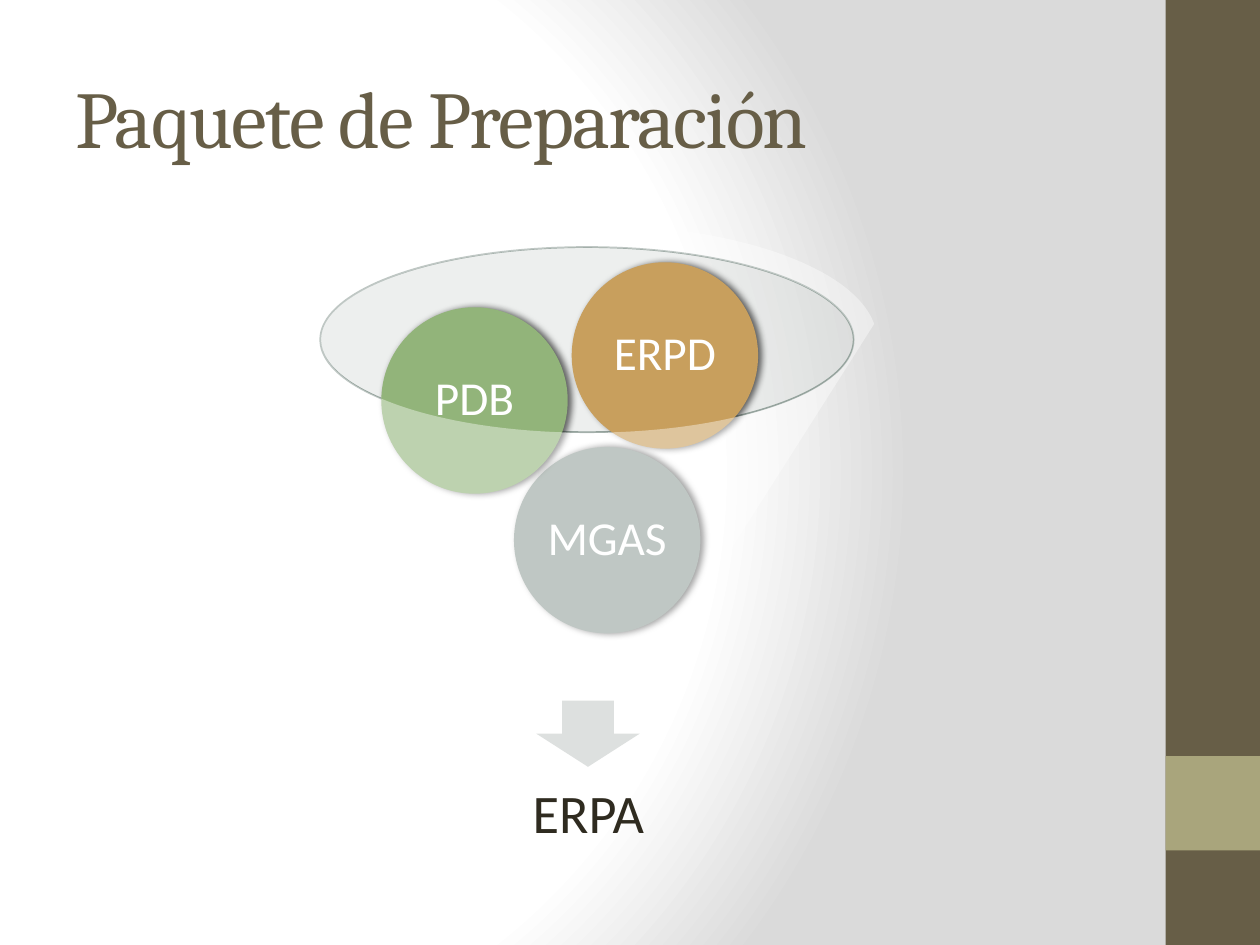
from lxml import etree
from pptx import Presentation
from pptx.dml.color import RGBColor
from pptx.enum.shapes import MSO_SHAPE as SHAPE
from pptx.enum.text import MSO_ANCHOR as ANCHOR, PP_ALIGN as ALIGN
from pptx.oxml import parse_xml
from pptx.oxml.ns import nsdecls, qn
from pptx.util import Pt

COLORS = {
    "white": "FFFFFF", "fade": "DADADA", "brown": "675E47", "olive": "A9A57C",
    "ink": "2F2B20", "rim": "D3D7D5", "gray": "95A39D", "arrow": "DDE0DF",
    "green": "92B47A", "ochre": "C89F5D", "black": "000000",
}

# Content
TITLE = "Paquete de Preparación"
RESULT = "ERPA"
BALLS = [  # text, colour, left, top
    ("MGAS", "gray", 293.7, 255.4),
    ("PDB", "green", 217.9, 175.6),
    ("ERPD", "ochre", 326.7, 149.9),
]
BALL_SIZE = 106.5
GRADIENT = [(0, "white"), (75, "white"), (100, "fade")]  # percent, colour


def rgb(name):
    return RGBColor.from_string(COLORS[name])


def add_shape(kind, box, fill, opacity=None, line=None):
    s = slide.shapes.add_shape(kind, *map(Pt, box))
    s.shadow.inherit = False
    s.fill.solid()
    s.fill.fore_color.rgb = rgb(fill)
    if opacity is not None:
        clr = s.element.spPr.find(qn("a:solidFill")).find(qn("a:srgbClr"))
        etree.SubElement(clr, qn("a:alpha")).set("val", str(opacity * 1000))
    if line:
        s.line.color.rgb = rgb(line)
        s.line.width = Pt(1)
    else:
        s.line.fill.background()
    return s


def add_shadow(s):
    effects = s.element.spPr.find(qn("a:effectLst"))
    effects.append(parse_xml(
        f'<a:outerShdw {nsdecls("a")} blurRad="{Pt(4)}" dist="{Pt(2)}" dir="0">'
        f'<a:srgbClr val="{COLORS["black"]}"><a:alpha val="60000"/></a:srgbClr>'
        '</a:outerShdw>'))


def set_text(s, text, size, color, font="Calibri", align=ALIGN.CENTER,
             inset=(3, 3), spacing=0.9, tracking=None):
    tf = s.text_frame
    tf.word_wrap = True
    tf.vertical_anchor = ANCHOR.MIDDLE
    tf.margin_left = tf.margin_right = Pt(inset[0])
    tf.margin_top = tf.margin_bottom = Pt(inset[1])
    p = tf.paragraphs[0]
    p.alignment = align
    p.line_spacing = spacing
    r = p.add_run()
    r.text = text
    r.font.name = font
    r.font.size = Pt(size)
    r.font.color.rgb = rgb(color)
    if tracking is not None:
        r.font._element.set("spc", str(tracking * 100))


prs = Presentation()
prs.slide_width, prs.slide_height = Pt(720), Pt(540)
slide = prs.slides.add_slide(prs.slide_layouts[6])

# Background: radial gradient
slide.background.fill.solid()
solid = next(slide.element.iter(qn("a:solidFill")))
stops = "".join(f'<a:gs pos="{pos * 1000}"><a:srgbClr val="{COLORS[c]}"/></a:gs>'
                for pos, c in GRADIENT)
solid.getparent().replace(solid, parse_xml(
    f'<a:gradFill {nsdecls("a")} rotWithShape="1"><a:gsLst>{stops}</a:gsLst>'
    '<a:path path="circle"><a:fillToRect l="20000" t="50000" r="100000" b="50000"/>'
    '</a:path></a:gradFill>'))

# Side band
add_shape(SHAPE.RECTANGLE, (666, 0, 54, 540), "brown")
add_shape(SHAPE.RECTANGLE, (666, 432, 54, 54), "olive")

# Title
title = slide.shapes.add_textbox(*map(Pt, (36, 21.6, 600, 90)))
set_text(title, TITLE, 46, "brown", font="Cambria", align=ALIGN.LEFT,
         inset=(7.2, 3.6), spacing=1.0, tracking=-1)

# Funnel mouth, arrow and result
add_shape(SHAPE.OVAL, (183, 141.2, 304.8, 105.8), "rim", opacity=40, line="gray")
add_shape(SHAPE.DOWN_ARROW, (306.5, 400.4, 59, 37.8), "arrow")
result = slide.shapes.add_textbox(*map(Pt, (194.4, 430.6, 283.5, 70.9)))
set_text(result, RESULT, 31, "ink", inset=(17.3, 17.3))

# Balls, with the translucent funnel in front
for text, color, left, top in BALLS:
    ball = add_shape(SHAPE.OVAL, (left, top, BALL_SIZE, BALL_SIZE), color)
    add_shadow(ball)
    set_text(ball, text, 27, "white")
add_shape(SHAPE.FUNNEL, (170.5, 128.2, 330.7, 264.6), "white", opacity=40)

prs.save("out.pptx")
